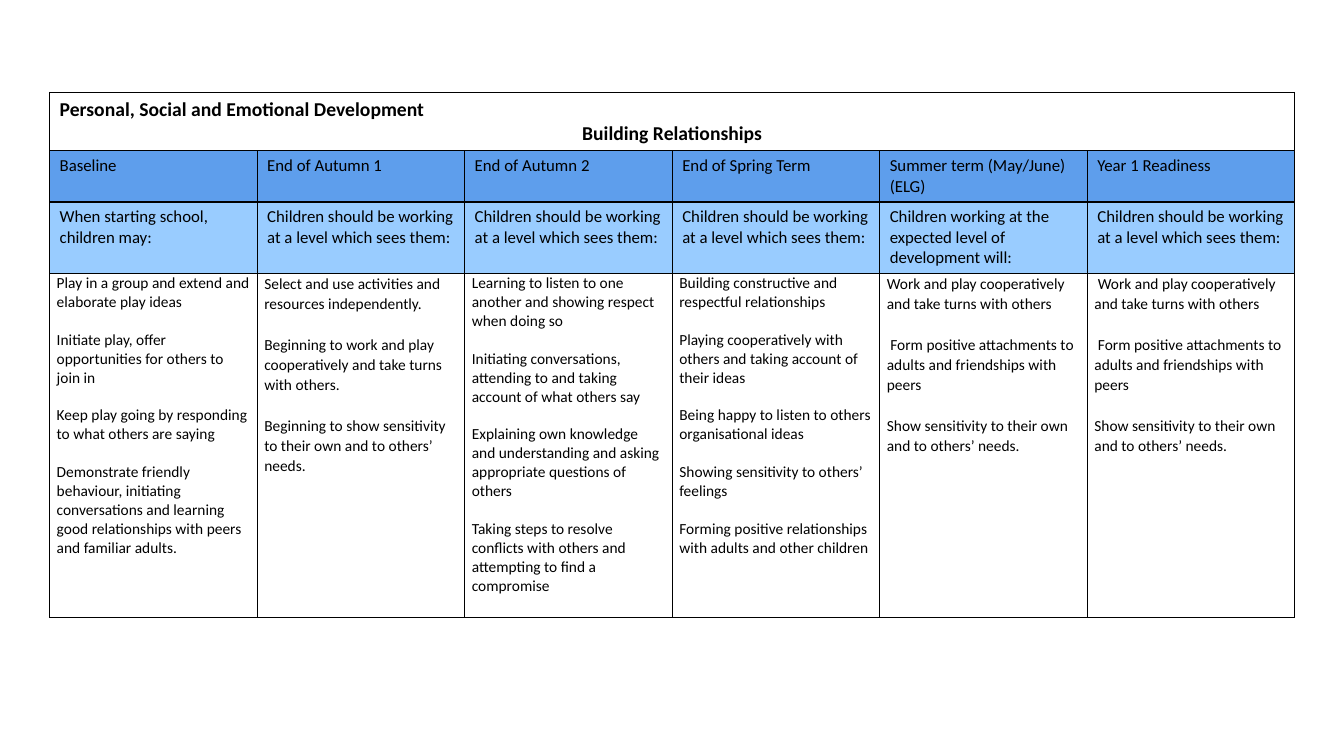
from lxml import etree
from pptx import Presentation, util as u
from pptx.dml.color import RGBColor
from pptx.enum import text
from pptx.oxml.ns import qn

WORKING = "Children should be working at a level which sees them:"
ELG = [
    "Work and play cooperatively and take turns with others",
    " Form positive attachments to adults and friendships with peers",
    "Show sensitivity to their own and to others’ needs.",
]
STAGES = [
    ("Baseline", "When starting school, children may:", 1, [
        "Play in a group and extend and elaborate play ideas",
        "Initiate play, offer opportunities for others to join in",
        "Keep play going by responding to what others are saying",
        "Demonstrate friendly behaviour, initiating conversations and learning "
        "good relationships with peers and familiar adults."]),
    ("End of Autumn 1", WORKING, 1.07, [
        "Select and use activities and resources independently.",
        "Beginning to work and play cooperatively and take turns with others.",
        "Beginning to show sensitivity to their own and to others’ needs."]),
    ("End of Autumn 2", WORKING, 1, [
        "Learning to listen to one another and showing respect when doing so",
        "Initiating conversations, attending to and taking account of what others say",
        "Explaining own knowledge and understanding and asking appropriate questions of others",
        "Taking steps to resolve conflicts with others and attempting to find a compromise"]),
    ("End of Spring Term", WORKING, 1, [
        "Building constructive and respectful relationships",
        "Playing cooperatively with others and taking account of their ideas",
        "Being happy to listen to others organisational ideas",
        "Showing sensitivity to others’ feelings",
        "Forming positive relationships with adults and other children"]),
    ("Summer term (May/June) (ELG)",
     "Children working at the expected level of development will:", 1.07, ELG),
    ("Year 1 Readiness", WORKING, 1.07, [" " + ELG[0]] + ELG[1:]),
]
ROW_HEIGHTS = [1.47, 1.29, 1.79, 8.67]


def rgb(value):
    """Return the colour for a hex string."""
    return RGBColor.from_string(value)


def add_borders(cell, color="000000", width=1):
    """Draw a solid line on each side of a cell."""
    tcPr = cell._tc.get_or_add_tcPr()
    for side in ("a:lnL", "a:lnR", "a:lnT", "a:lnB"):
        ln = etree.SubElement(tcPr, qn(side), w=str(u.Pt(width)))
        fill = etree.SubElement(ln, qn("a:solidFill"))
        etree.SubElement(fill, qn("a:srgbClr"), val=color)


def style_cell(cell, fill=None):
    """Give a cell its borders and fill."""
    add_borders(cell)
    if fill:
        cell.fill.solid()
        cell.fill.fore_color.rgb = rgb(fill)
    else:
        cell.fill.background()


def write_cell(cell, lines, size, bold=False, spacing=1, gap=0):
    """Write one paragraph per line, with a gap between paragraphs."""
    tf = cell.text_frame
    tf.text = "\n".join(lines)
    for i, p in enumerate(tf.paragraphs):
        p.font.name, p.font.size, p.font.bold = "Calibri", u.Pt(size), bold
        p.font.color.rgb = rgb("000000")
        p.line_spacing = spacing
        p.space_before = u.Pt(gap if i else 0)


def add_heading(table):
    """Fill the merged heading row."""
    cell = table.cell(0, 0)
    cell.merge(table.cell(0, len(STAGES) - 1))
    write_cell(cell, ["Personal, Social and Emotional Development",
                      "Building Relationships"], 14, bold=True)
    cell.text_frame.paragraphs[1].alignment = text.PP_ALIGN.CENTER


def add_stage(table, col, stage):
    """Fill one column with a stage, its lead-in and its statements."""
    name, lead_in, spacing, statements = stage
    write_cell(table.cell(1, col), [name], 12)
    write_cell(table.cell(2, col), [lead_in], 12)
    body = table.cell(3, col)
    body.margin_left = body.margin_right = u.Cm(0.18)
    body.margin_top = body.margin_bottom = 0
    write_cell(body, statements, 11, spacing=spacing, gap=round(13.4 * spacing, 1))


def add_progression_table(slide, left, top, width):
    """Build the progression table at the given place and width."""
    frame = slide.shapes.add_table(len(ROW_HEIGHTS), len(STAGES), u.Cm(left), u.Cm(top),
                                   u.Cm(width), u.Cm(sum(ROW_HEIGHTS)))
    table = frame.table
    table.first_row = table.horz_banding = False
    fills = [None, "5E9EEC", "99CCFF", None]
    for row, height, fill in zip(table.rows, ROW_HEIGHTS, fills):
        row.height = u.Cm(height)
        for cell in row.cells:
            style_cell(cell, fill)
    add_heading(table)
    for col, stage in enumerate(STAGES):
        add_stage(table, col, stage)


def main():
    """Build and save the slide."""
    prs = Presentation()
    prs.slide_width, prs.slide_height = u.Cm(33.87), u.Cm(19.05)
    slide = prs.slides.add_slide(prs.slide_layouts[6])
    add_progression_table(slide, 1.25, 2.33, 31.38)
    prs.save("out.pptx")


if __name__ == "__main__":
    main()
